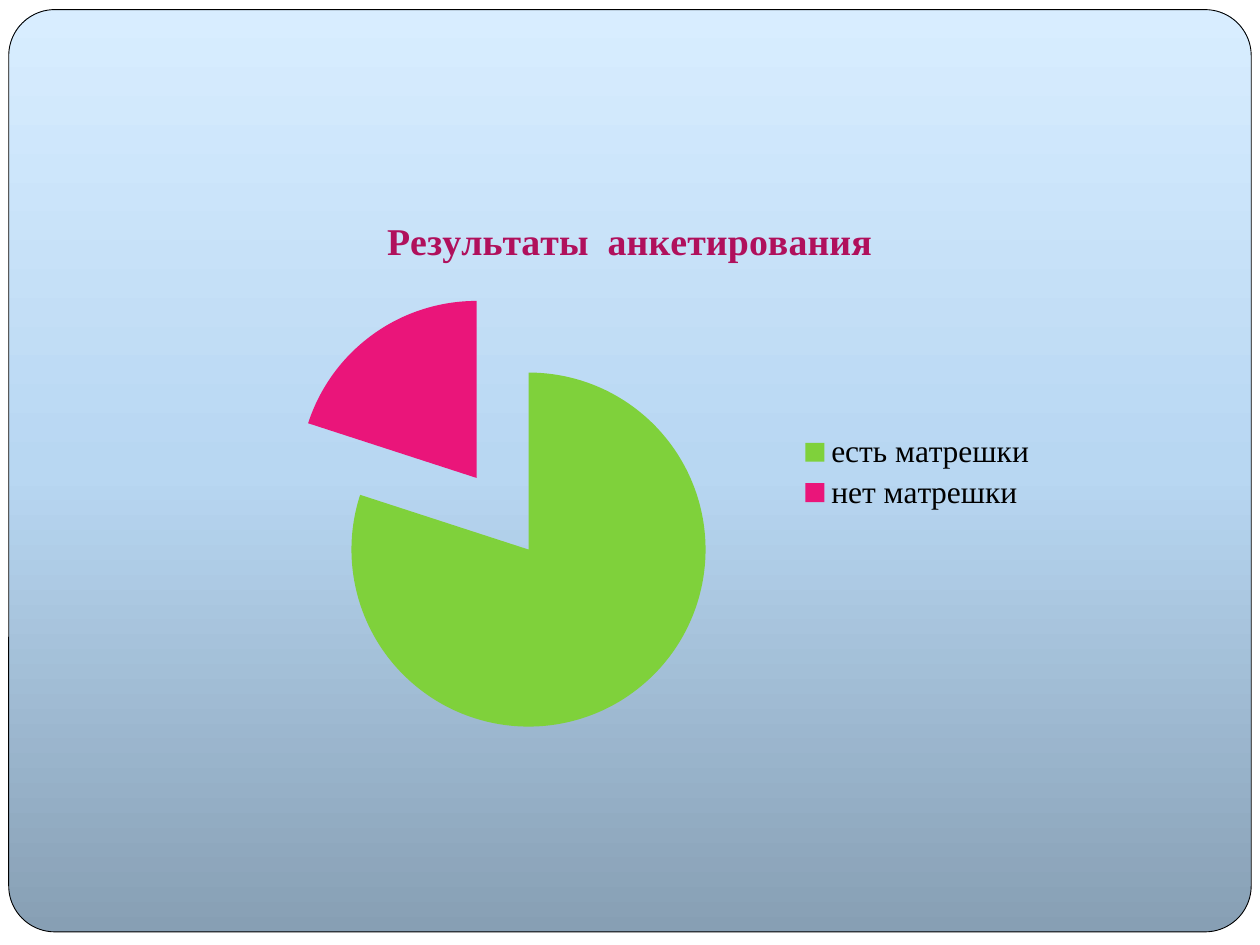
from copy import deepcopy

from lxml import etree
from pptx import Presentation
from pptx.chart.data import CategoryChartData
from pptx.dml.color import RGBColor
from pptx.enum.chart import XL_CHART_TYPE, XL_LEGEND_POSITION
from pptx.enum.shapes import MSO_SHAPE
from pptx.oxml.ns import qn
from pptx.util import Pt

PIE = XL_CHART_TYPE.PIE
RIGHT = XL_LEGEND_POSITION.RIGHT
ROUND = MSO_SHAPE.ROUNDED_RECTANGLE

WHITE = RGBColor(0xFF, 0xFF, 0xFF)
BLACK = RGBColor(0x00, 0x00, 0x00)
PLUM = RGBColor(0xB0, 0x10, 0x5C)
GREEN = RGBColor(0x7F, 0xD1, 0x3B)
PINK = RGBColor(0xEA, 0x15, 0x7A)
SLATE = RGBColor(0x87, 0x9F, 0xB4)
SKY = RGBColor(0xB8, 0xD7, 0xF2)
PALE = RGBColor(0xD8, 0xED, 0xFF)

FONT = "Times New Roman"
TITLE = "Результаты  анкетирования"
SLICES = [("есть матрешки", 80, GREEN), ("нет матрешки", 20, PINK)]
SHADES = [(0, SLATE), (0.5, SKY), (1, PALE)]
EXPLODE = 25

WIDE, HIGH = 720, 540
PANEL = (5, 5.5, 710, 527)
CHART = (120, 110, 480, 320)


def style(font, size=18, color=BLACK, bold=False):
    font.name = FONT
    font.size = Pt(size)
    font.bold = bold
    font.color.rgb = color


def add_panel(slide):
    panel = slide.shapes.add_shape(ROUND, *map(Pt, PANEL))
    panel.adjustments[0] = 0.05
    panel.shadow.inherit = False
    panel.line.color.rgb = BLACK
    panel.line.width = Pt(0.5)
    fill = panel.fill
    fill.gradient()
    fill.gradient_angle = 90
    stops = panel._element.spPr.find(qn("a:gradFill")).find(qn("a:gsLst"))
    stops.append(deepcopy(stops[-1]))
    for stop, (place, color) in zip(fill.gradient_stops, SHADES):
        stop.position = place
        stop.color.rgb = color


def add_pie(slide):
    data = CategoryChartData()
    data.categories = [name for name, _, _ in SLICES]
    data.add_series("Series 1", [value for _, value, _ in SLICES])
    chart = slide.shapes.add_chart(PIE, *map(Pt, CHART), data).chart
    style(chart.font)

    chart.has_title = True
    frame = chart.chart_title.text_frame
    frame.text = TITLE
    style(frame.paragraphs[0].runs[0].font, size=21.6, color=PLUM, bold=True)
    chart.chart_title.include_in_layout = False

    chart.has_legend = True
    chart.legend.position = RIGHT
    chart.legend.include_in_layout = False

    plot = chart.plots[0]
    plot.vary_by_categories = True
    series = plot.series[0]
    for i, (_, _, color) in enumerate(SLICES):
        fill = series.points[i].format.fill
        fill.solid()
        fill.fore_color.rgb = color
    burst = etree.Element(qn("c:explosion"), val=str(EXPLODE))
    series._element.find(qn("c:dPt")).addprevious(burst)


def main():
    deck = Presentation()
    deck.slide_width, deck.slide_height = Pt(WIDE), Pt(HIGH)
    slide = deck.slides.add_slide(deck.slide_layouts[6])
    back = slide.background.fill
    back.solid()
    back.fore_color.rgb = WHITE
    add_panel(slide)
    add_pie(slide)
    deck.save("out.pptx")


if __name__ == "__main__":
    main()
